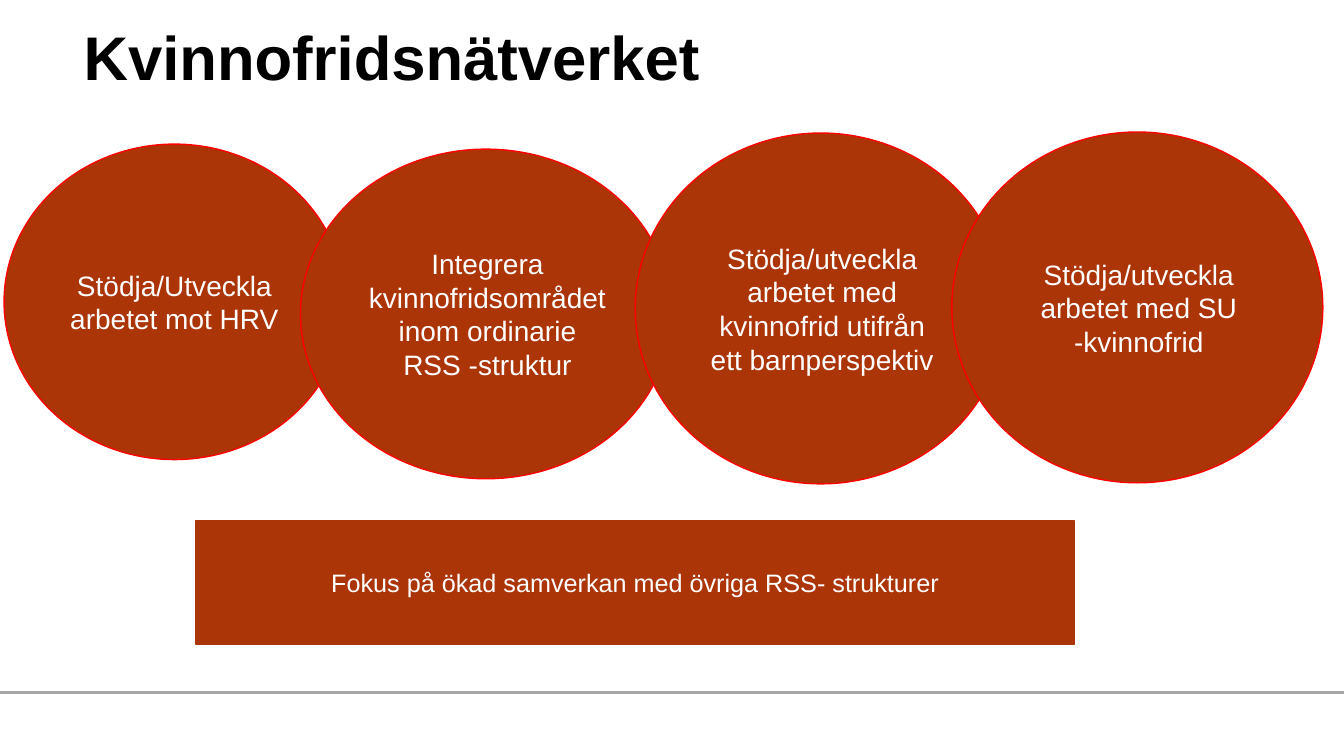
from dataclasses import dataclass

from lxml import etree
from pptx import Presentation
from pptx.dml.color import RGBColor
from pptx.enum.shapes import MSO_CONNECTOR, MSO_SHAPE
from pptx.enum.text import MSO_ANCHOR, PP_ALIGN
from pptx.oxml.ns import qn
from pptx.util import Inches, Pt

OVAL, RECT = MSO_SHAPE.OVAL, MSO_SHAPE.RECTANGLE
STRAIGHT = MSO_CONNECTOR.STRAIGHT
TOP, MIDDLE = MSO_ANCHOR.TOP, MSO_ANCHOR.MIDDLE
LEFT, CENTER = PP_ALIGN.LEFT, PP_ALIGN.CENTER

FONT = "Arial"
WIDTH, HEIGHT = 13.33, 7.5
RULE_Y = 6.87
COLORS = {
    "rust": "AC3508",
    "rust_edge": "AA3407",
    "red": "FF0000",
    "gray": "A6A6A6",
    "black": "000000",
    "white": "FFFFFF",
}


@dataclass
class Block:
    text: str
    left: float
    top: float
    width: float
    height: float
    kind: int = OVAL
    edge: str = "red"
    size: int = 20
    indent: float = 0.03


BLOCKS = [
    Block("Stödja/Utveckla arbetet mot HRV", 0.04, 1.43, 3.38, 3.13, indent=0),
    Block("Integrera kvinnofridsområdet inom ordinarie RSS -struktur",
          2.98, 1.48, 3.68, 3.27),
    Block("Stödja/utveckla arbetet med kvinnofrid utifrån ett barnperspektiv",
          6.3, 1.32, 3.68, 3.48),
    Block("Stödja/utveckla arbetet med SU -kvinnofrid", 9.44, 1.31, 3.68, 3.48),
    Block("Fokus på ökad samverkan med övriga RSS- strukturer",
          1.94, 5.17, 8.72, 1.22, RECT, "rust_edge", 18, 0),
]


def rgb(name: str) -> RGBColor:
    return RGBColor.from_string(COLORS[name])


def set_attrs(obj, values: dict) -> None:
    for name, value in values.items():
        setattr(obj, name, value)


def write_text(sp, text: str, frame: dict, para: dict, font: dict, color: str) -> None:
    """Fill a shape with one formatted paragraph."""
    tf = sp.text_frame
    set_attrs(tf, {"word_wrap": True, **frame})
    p = tf.paragraphs[0]
    set_attrs(p, para)
    r = p.add_run()
    r.text = text
    set_attrs(r.font, {"name": FONT, **font})
    r.font.color.rgb = rgb(color)


def add_rule(s) -> None:
    line = s.shapes.add_connector(
        STRAIGHT, Inches(0), Inches(RULE_Y), Inches(WIDTH), Inches(RULE_Y))
    line.line.color.rgb = rgb("gray")
    line.line.width = Pt(1.5)
    etree.SubElement(line._element.spPr, qn("a:effectLst"))


def add_title(s, text: str) -> None:
    sp = s.shapes.add_textbox(Inches(0.77), Inches(0.21), Inches(10.51), Inches(1.35))
    frame = {"vertical_anchor": TOP, "margin_left": Inches(0.06),
             "margin_top": Inches(0.12)}
    write_text(sp, text, frame, {"alignment": LEFT, "line_spacing": 0.8},
               {"size": Pt(44), "bold": True}, "black")


def add_block(s, block: Block) -> None:
    sp = s.shapes.add_shape(block.kind, Inches(block.left), Inches(block.top),
                            Inches(block.width), Inches(block.height))
    sp.shadow.inherit = False
    sp.fill.solid()
    sp.fill.fore_color.rgb = rgb("rust")
    sp.line.color.rgb = rgb(block.edge)
    sp.line.width = Pt(1)
    write_text(sp, block.text, {"vertical_anchor": MIDDLE}, {"alignment": CENTER},
               {"size": Pt(block.size)}, "white")
    if block.indent:
        pPr = sp.text_frame.paragraphs[0]._p.get_or_add_pPr()
        pPr.set("marL", str(Inches(block.indent)))


def main() -> None:
    prs = Presentation()
    prs.slide_width, prs.slide_height = Inches(WIDTH), Inches(HEIGHT)
    s = prs.slides.add_slide(prs.slide_layouts[6])
    add_rule(s)
    add_title(s, "Kvinnofridsnätverket")
    for block in BLOCKS:
        add_block(s, block)
    prs.save("out.pptx")


if __name__ == "__main__":
    main()
